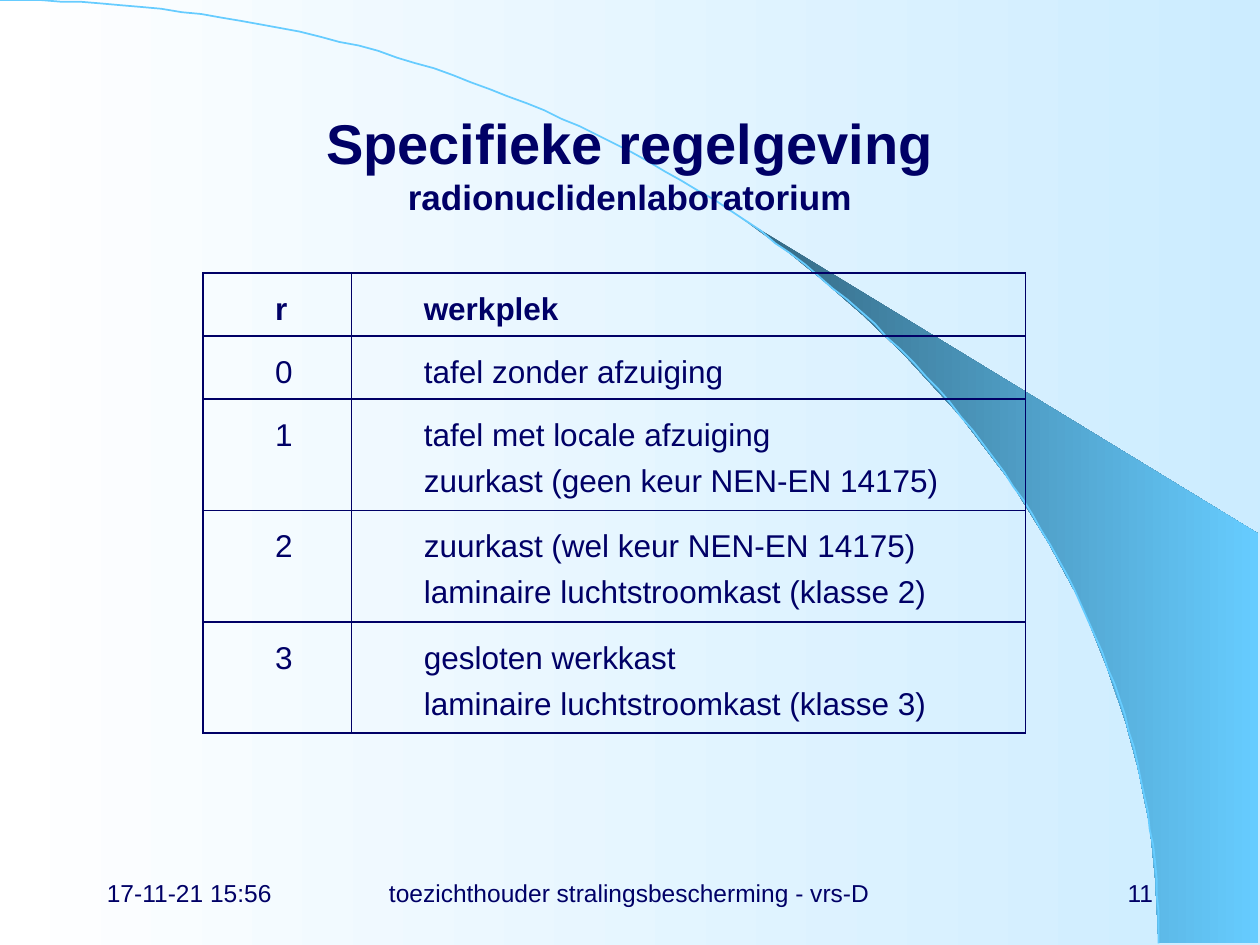
"""Build the slide on workplaces in a radionuclide laboratory."""
import math

import pptx
import pptx.dml.color
import pptx.enum.text
import pptx.oxml
import pptx.oxml.ns
import pptx.util

Pt = pptx.util.Pt
ALIGN = pptx.enum.text.PP_ALIGN
COLOURS = {
    "ink": "000066",
    "paper": "FFFFFF",
    "ice": "CCECFF",
    "sky": "66CCFF",
    "shade": "336680",
}
FONT = "Arial"
WEDGE = [
    (662.4, 538.6), (719.3, 539.3), (719.3, 304.6), (424.1, 124.6),
    (449.3, 143.3), (470.2, 159.8), (493.2, 180), (515.5, 201.6),
    (548.6, 237.6), (578.2, 276.5), (599, 310.3), (617.8, 344.9),
    (632.2, 380.2), (643, 411.8), (650.2, 438.5), (657.4, 472.3),
    (660.2, 501.1),
]
ROWS = [
    ("r", ["werkplek"]),
    ("0", ["tafel zonder afzuiging"]),
    ("1", ["tafel met locale afzuiging", "zuurkast (geen keur NEN-EN 14175)"]),
    ("2", ["zuurkast (wel keur NEN-EN 14175)", "laminaire luchtstroomkast (klasse 2)"]),
    ("3", ["gesloten werkkast", "laminaire luchtstroomkast (klasse 3)"]),
]
FOOTERS = [
    ("17-11-21 15:56", 54, 150, ALIGN.LEFT),
    ("toezichthouder stralingsbescherming - vrs-D", 206.6, 306, ALIGN.CENTER),
    ("11", 516, 150, ALIGN.RIGHT),
]


def colour(name):
    """Return the named colour as an RGB value."""
    return pptx.dml.color.RGBColor.from_string(COLOURS[name])


def fill_gradient(fill, start, end):
    """Fill from left to right between two named colours."""
    fill.gradient()
    fill.gradient_angle = 0
    for stop, name in zip(fill.gradient_stops, (start, end)):
        stop.color.rgb = colour(name)


def add_outline(page, points, close):
    """Draw a freeform through points without a shadow."""
    builder = page.shapes.build_freeform(*points[0], scale=Pt(1))
    builder.add_line_segments(points[1:], close=close)
    shape = builder.convert_to_shape()
    shape.shadow.inherit = False
    return shape


def add_wedge(page):
    """Draw the shaded wedge on the right."""
    wedge = add_outline(page, WEDGE, True)
    fill_gradient(wedge.fill, "shade", "sky")
    wedge.line.fill.background()


def add_arc(page, width, height, steps=90):
    """Draw a quarter ellipse from the top left corner to the bottom."""
    angles = [math.pi / 2 * step / steps for step in range(steps + 1)]
    points = [(width * math.sin(a), height * (1 - math.cos(a))) for a in angles]
    arc = add_outline(page, points, False)
    arc.fill.background()
    arc.line.color.rgb = colour("sky")
    arc.line.width = Pt(1)


def add_span(para, text, size, bold=False):
    """Add a run of text in the slide's font and colour."""
    span = para.add_run()
    span.text = text
    span.font.name = FONT
    span.font.size = Pt(size)
    span.font.bold = bold
    span.font.color.rgb = colour("ink")


def add_text(page, lines, left, top, width, height, align=ALIGN.LEFT, bold=False):
    """Add a text box from (text, size) lines joined by line breaks."""
    box = page.shapes.add_textbox(Pt(left), Pt(top), Pt(width), Pt(height))
    frame = box.text_frame
    frame.word_wrap = True
    frame.vertical_anchor = pptx.enum.text.MSO_ANCHOR.MIDDLE
    para = frame.paragraphs[0]
    para.alignment = align
    for index, (text, size) in enumerate(lines):
        if index:
            para.add_line_break()
        add_span(para, text, size, bold)


def add_borders(cell):
    """Give a cell a thin line on all four sides."""
    properties = cell._tc.get_or_add_tcPr()
    for index, side in enumerate("LRTB"):
        properties.insert(index, pptx.oxml.parse_xml(
            f'<a:ln{side} {pptx.oxml.ns.nsdecls("a")} w="{Pt(1)}"><a:solidFill>'
            f'<a:srgbClr val="{COLOURS["ink"]}"/></a:solidFill></a:ln{side}>'))


def fill_cell(cell, lines, bold):
    """Write indented paragraphs into a bordered, unfilled cell."""
    cell.fill.background()
    add_borders(cell)
    cell.margin_top = Pt(10.8)
    frame = cell.text_frame
    for index, text in enumerate(lines):
        para = frame.add_paragraph() if index else frame.paragraphs[0]
        para.space_before = para.space_after = Pt(3)
        indents = para._p.get_or_add_pPr()
        indents.set("marL", str(Pt(34)))
        indents.set("indent", "0")
        add_span(para, text, 18, bold)


def add_workplaces(page):
    """Add the table of workplaces by r value."""
    widths = (85, 385)
    heights = [32.4 if len(lines) == 1 else 56.2 for _, lines in ROWS]
    table = page.shapes.add_table(
        len(ROWS), 2, Pt(116), Pt(156), Pt(sum(widths)), Pt(sum(heights))).table
    table.horz_banding = False
    table.first_row = False
    for column, width in zip(table.columns, widths):
        column.width = Pt(width)
    for index, (value, lines) in enumerate(ROWS):
        table.rows[index].height = Pt(heights[index])
        fill_cell(table.cell(index, 0), [value], index == 0)
        fill_cell(table.cell(index, 1), lines, index == 0)


def main():
    """Build and save the deck."""
    deck = pptx.Presentation()
    deck.slide_width, deck.slide_height = Pt(720), Pt(540)
    page = deck.slides.add_slide(deck.slide_layouts[6])
    fill_gradient(page.background.fill, "paper", "ice")
    add_wedge(page)
    add_arc(page, 662.4, 539.3)
    for text, left, width, align in FOOTERS:
        add_text(page, [(text, 14)], left, 492, width, 36, align)
    title = [("Specifieke regelgeving", 32), ("radionuclidenlaboratorium", 20)]
    add_text(page, title, 54, 48, 612, 90, ALIGN.CENTER, bold=True)
    add_workplaces(page)
    deck.save("out.pptx")


if __name__ == "__main__":
    main()
